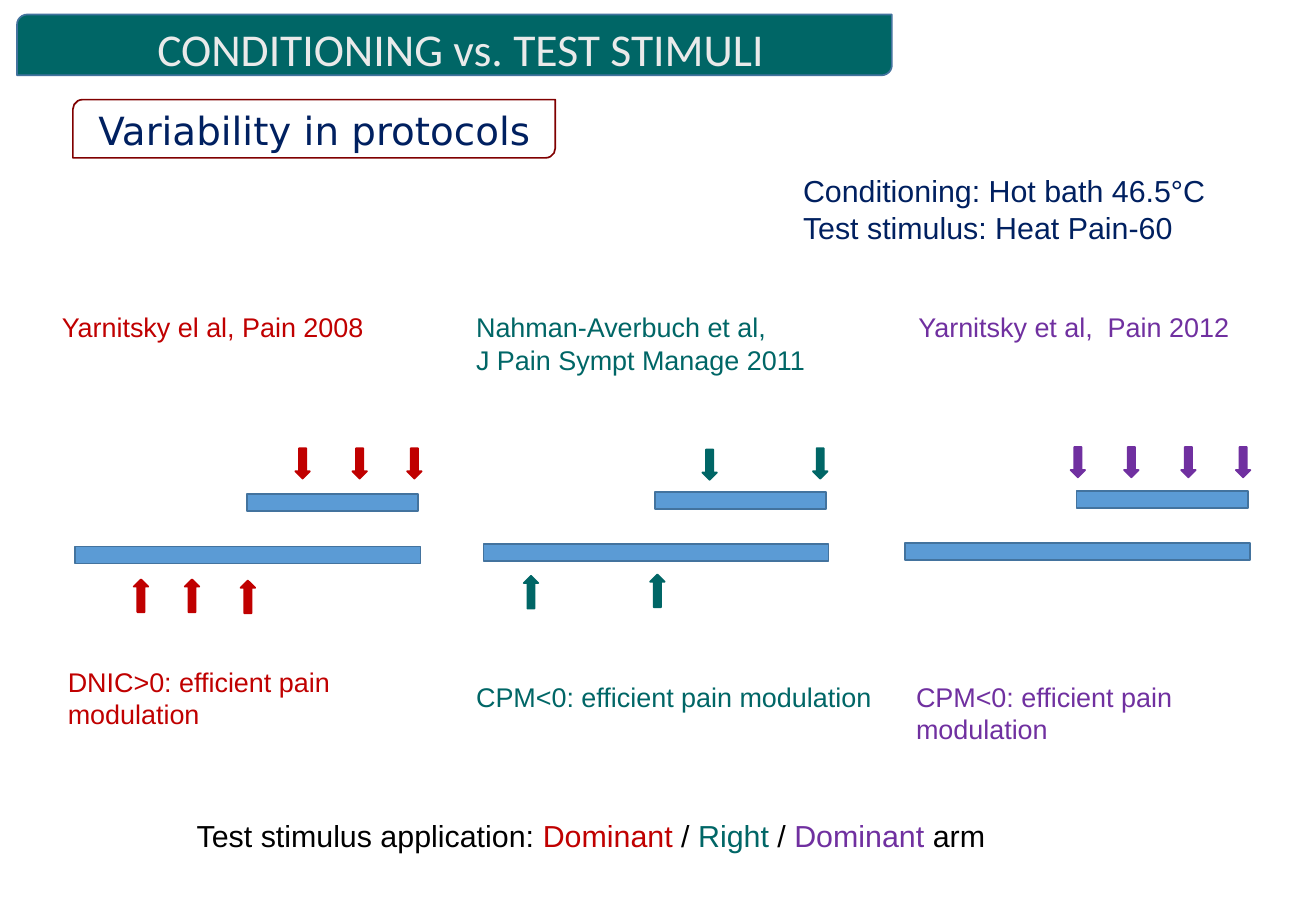
"""Build a slide comparing conditioning and test stimuli in three pain studies."""
from pptx import Presentation
from pptx import util as u
from pptx.dml import color
from pptx.enum import shapes, text

THEME = {
    "red": "C00000", "teal": "006666", "purple": "7030A0", "navy": "002060",
    "black": "000000", "light": "EAEAEA", "maroon": "800000",
    "bar": "5B9BD5", "edge": "43739E",
    "title": 27, "subtitle": 23, "body": 18, "caption": 16,
}


def add_figure(kind, box, fill, line):
    shape = slide.shapes.add_shape(kind, *map(u.Inches, box))
    shape.shadow.inherit = False
    if fill:
        shape.fill.solid()
        shape.fill.fore_color.rgb = color.RGBColor.from_string(THEME[fill])
    else:
        shape.fill.background()
    shape.line.color.rgb = color.RGBColor.from_string(THEME[line])
    shape.line.width = u.Pt(1)
    return shape


def write_text(shape, lines, size, font="Arial", align=text.PP_ALIGN.LEFT, inset=(0.1, 0.05)):
    frame = shape.text_frame
    side, edge = map(u.Inches, inset)
    layout = {
        "word_wrap": True, "auto_size": text.MSO_AUTO_SIZE.NONE,
        "vertical_anchor": text.MSO_ANCHOR.TOP,
        "margin_left": side, "margin_right": side,
        "margin_top": edge, "margin_bottom": edge,
    }
    for name, value in layout.items():
        setattr(frame, name, value)
    for index, runs in enumerate(lines):
        paragraph = frame.add_paragraph() if index else frame.paragraphs[0]
        paragraph.alignment = align
        for words, tone in runs:
            run = paragraph.add_run()
            run.text = words
            for name, value in {"name": font, "size": u.Pt(THEME[size]), "bold": False}.items():
                setattr(run.font, name, value)
            run.font.color.rgb = color.RGBColor.from_string(THEME[tone])


presentation = Presentation()
presentation.slide_width = u.Inches(10.83)
presentation.slide_height = u.Inches(7.5)
slide = presentation.slides.add_slide(presentation.slide_layouts[5])
for placeholder in list(slide.placeholders):
    if placeholder.placeholder_format.idx:
        placeholder.element.getparent().remove(placeholder.element)

kinds = shapes.MSO_SHAPE
centered = {"align": text.PP_ALIGN.CENTER, "inset": (0.11, 0.06)}

banner = add_figure(kinds.ROUND_2_DIAG_RECTANGLE, (0.14, 0.12, 7.2, 0.5), "teal", "edge")
title = slide.shapes.title
title_box = {"left": 0, "top": 0.11, "width": 7.58, "height": 0.57}
for name, value in title_box.items():
    setattr(title, name, u.Inches(value))
write_text(title, [[("CONDITIONING vs. TEST STIMULI", "light")]], "title", "Calibri", **centered)
title.element.addprevious(banner.element)

subtitle = slide.shapes.add_textbox(*map(u.Inches, (0.61, 0.82, 3.96, 0.5)))
write_text(subtitle, [[("Variability in protocols", "navy")]], "subtitle", "DejaVu Sans", **centered)
add_figure(kinds.ROUND_2_DIAG_RECTANGLE, (0.6, 0.82, 3.97, 0.48), None, "maroon")

body_texts = [
    ((6.51, 1.37, 3.78, 0.71), [
        [("Conditioning: Hot bath 46.5°C", "navy")],
        [("Test stimulus: Heat Pain-60", "navy")],
    ]),
    ((1.52, 6.68, 7.11, 0.4), [[
        ("Test stimulus application: ", "black"), ("Dominant", "red"), (" / ", "black"),
        ("Right", "teal"), (" / ", "black"), ("Dominant", "purple"), (" arm", "black"),
    ]]),
]
for box, lines in body_texts:
    write_text(slide.shapes.add_textbox(*map(u.Inches, box)), lines, "body")

studies = [
    {"tone": "red", "bar": (0.62, 4.5),
     "source": ["Yarnitsky el al, Pain 2008"], "source_box": (0.41, 2.51, 3.05, 0.37),
     "result": "DNIC>0: efficient pain modulation", "result_box": (0.46, 5.43, 3.13, 0.64),
     "down": [(2.43, 3.69), (2.9, 3.69), (3.35, 3.69)],
     "up": [(1.1, 4.77), (1.52, 4.77), (1.98, 4.78)]},
    {"tone": "teal", "bar": (3.98, 4.48),
     "source": ["Nahman-Averbuch et al,", "J Pain Sympt Manage 2011"],
     "source_box": (3.82, 2.51, 2.97, 0.64),
     "result": "CPM<0: efficient pain modulation", "result_box": (3.82, 5.55, 3.47, 0.64),
     "down": [(5.78, 3.7), (6.69, 3.69)],
     "up": [(4.31, 4.74), (5.35, 4.73)]},
    {"tone": "purple", "bar": (7.45, 4.47),
     "source": ["Yarnitsky et al,  Pain 2012"], "source_box": (7.46, 2.51, 2.96, 0.37),
     "result": "CPM<0: efficient pain modulation", "result_box": (7.44, 5.55, 2.97, 0.64),
     "down": [(8.81, 3.68), (9.25, 3.68), (9.72, 3.68), (10.17, 3.68)],
     "up": []},
]
arrows = {"down": (kinds.DOWN_ARROW, 0.25), "up": (kinds.UP_ARROW, 0.27)}

for study in studies:
    tone = study["tone"]
    left, top = study["bar"]
    add_figure(kinds.RECTANGLE, (left, top, 2.84, 0.14), "bar", "edge")
    add_figure(kinds.RECTANGLE, (left + 1.41, top - 0.43, 1.41, 0.14), "bar", "edge")
    for direction, (kind, height) in arrows.items():
        for x, y in study[direction]:
            add_figure(kind, (x, y, 0.12, height), tone, tone)
    for part, lines in (("source", study["source"]), ("result", [study["result"]])):
        caption = slide.shapes.add_textbox(*map(u.Inches, study[part + "_box"]))
        write_text(caption, [[(line, tone)] for line in lines], "caption")

presentation.save("out.pptx")
